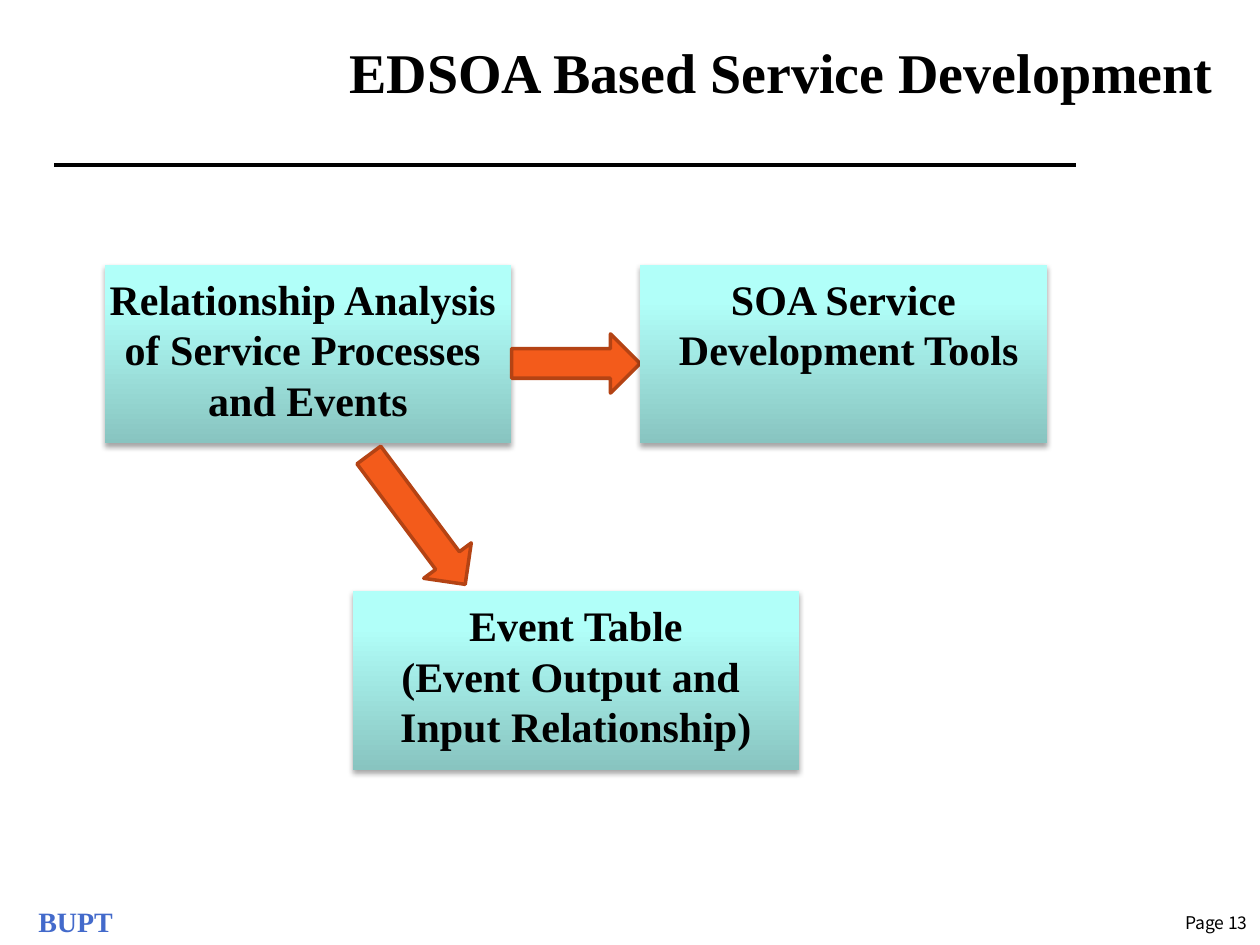
from lxml import etree
from pptx import Presentation
from pptx.dml.color import RGBColor
from pptx.enum import shapes, text
from pptx.oxml import parse_xml
from pptx.oxml.ns import nsdecls, qn
from pptx.util import Inches, Pt

COLORS = {
    "black": "000000",
    "white": "FFFFFF",
    "footer": "436ACB",
    "arrow": "F35B1B",
    "arrow_edge": "B44314",
}
BOX_STOPS = [(0, "88C4C0"), (80, "B1FFF9"), (100, "B3FFF9")]
SERIF = "Times New Roman"
SANS = "Noto Sans CJK SC"
ALIGN = text.PP_ALIGN


def rgb(name):
    return RGBColor.from_string(COLORS[name])


def inches(*values):
    return [Inches(value) for value in values]


def write_lines(frame, lines, size, font=SERIF, color="black", bold=True,
                align=ALIGN.CENTER, spacing=None, top=0.05, wrap=False):
    frame.word_wrap = wrap
    frame.vertical_anchor = text.MSO_ANCHOR.TOP
    frame.margin_top = Inches(top)
    for index, line in enumerate(lines):
        paragraph = frame.add_paragraph() if index else frame.paragraphs[0]
        paragraph.add_run().text = line
        paragraph.alignment = align
        paragraph.line_spacing = spacing
        paragraph.font.size = Pt(size)
        paragraph.font.name = font
        paragraph.font.bold = bold
        paragraph.font.color.rgb = rgb(color)


def add_label(slide, place, line, size, **style):
    label = slide.shapes.add_textbox(*inches(*place))
    write_lines(label.text_frame, [line], size, **style)


def add_rule(slide, left, right, y):
    rule = slide.shapes.add_connector(
        shapes.MSO_CONNECTOR.STRAIGHT, *inches(left, y, right, y))
    rule.line.color.rgb = rgb("black")
    rule.line.width = Pt(2)
    etree.SubElement(rule._element.spPr, qn("a:effectLst"))


def add_step(slide, place, lines):
    """Add a gradient box with a soft shadow below it."""
    step = slide.shapes.add_shape(shapes.MSO_SHAPE.RECTANGLE, *inches(*place))
    step.line.fill.background()
    stops = "".join(
        f'<a:gs pos="{pos * 1000}"><a:srgbClr val="{color}"/></a:gs>'
        for pos, color in BOX_STOPS)
    properties = step._element.spPr
    properties.find(qn("a:prstGeom")).addnext(parse_xml(
        f'<a:gradFill {nsdecls("a")} rotWithShape="1"><a:gsLst>{stops}</a:gsLst>'
        '<a:lin ang="16200000" scaled="0"/></a:gradFill>'))
    properties.append(parse_xml(
        f'<a:effectLst {nsdecls("a")}><a:outerShdw blurRad="{Pt(3.1)}" '
        f'dist="{Pt(1.8)}" dir="5400000" rotWithShape="0">'
        f'<a:srgbClr val="{COLORS["black"]}"><a:alpha val="35000"/></a:srgbClr>'
        '</a:outerShdw></a:effectLst>'))
    write_lines(step.text_frame, lines, 24, spacing=Pt(28.8), top=0.07)


def add_arrow(slide, place, rotation=0):
    arrow = slide.shapes.add_shape(
        shapes.MSO_SHAPE.RIGHT_ARROW, *inches(*place))
    arrow.rotation = rotation
    arrow.shadow.inherit = False
    arrow.fill.solid()
    arrow.fill.fore_color.rgb = rgb("arrow")
    arrow.line.color.rgb = rgb("arrow_edge")
    arrow.line.width = Pt(2)


def main():
    deck = Presentation()
    deck.slide_width, deck.slide_height = inches(10, 7.5)
    slide = deck.slides.add_slide(deck.slide_layouts[6])
    slide.background.fill.solid()
    slide.background.fill.fore_color.rgb = rgb("white")

    add_label(slide, (9.2, 7.19, 0.8, 0.26), "Page 13", 10, font=SANS,
              bold=False, align=ALIGN.RIGHT, wrap=True)
    add_rule(slide, 0.43, 8.54, 1.31)
    add_label(slide, (0.2, 7.13, 0.85, 0.37), "BUPT ", 16, color="footer")
    add_label(slide, (2.17, 0.21, 7.56, 0.87),
              "EDSOA Based Service Development", 32,
              align=ALIGN.RIGHT, top=0.09, wrap=True)

    add_step(slide, (0.83, 2.1, 3.23, 1.42),
             ["Relationship Analysis ", "of Service Processes ", "and Events"])
    add_arrow(slide, (4.06, 2.65, 1.02, 0.47))
    add_step(slide, (5.08, 2.1, 3.23, 1.42),
             ["SOA Service", " Development Tools"])
    add_step(slide, (2.8, 4.69, 3.54, 1.42),
             ["Event Table", "(Event Output and ", "Input Relationship)"])
    add_arrow(slide, (2.67, 3.89, 1.28, 0.47), rotation=53.3)

    deck.save("out.pptx")


if __name__ == "__main__":
    main()
